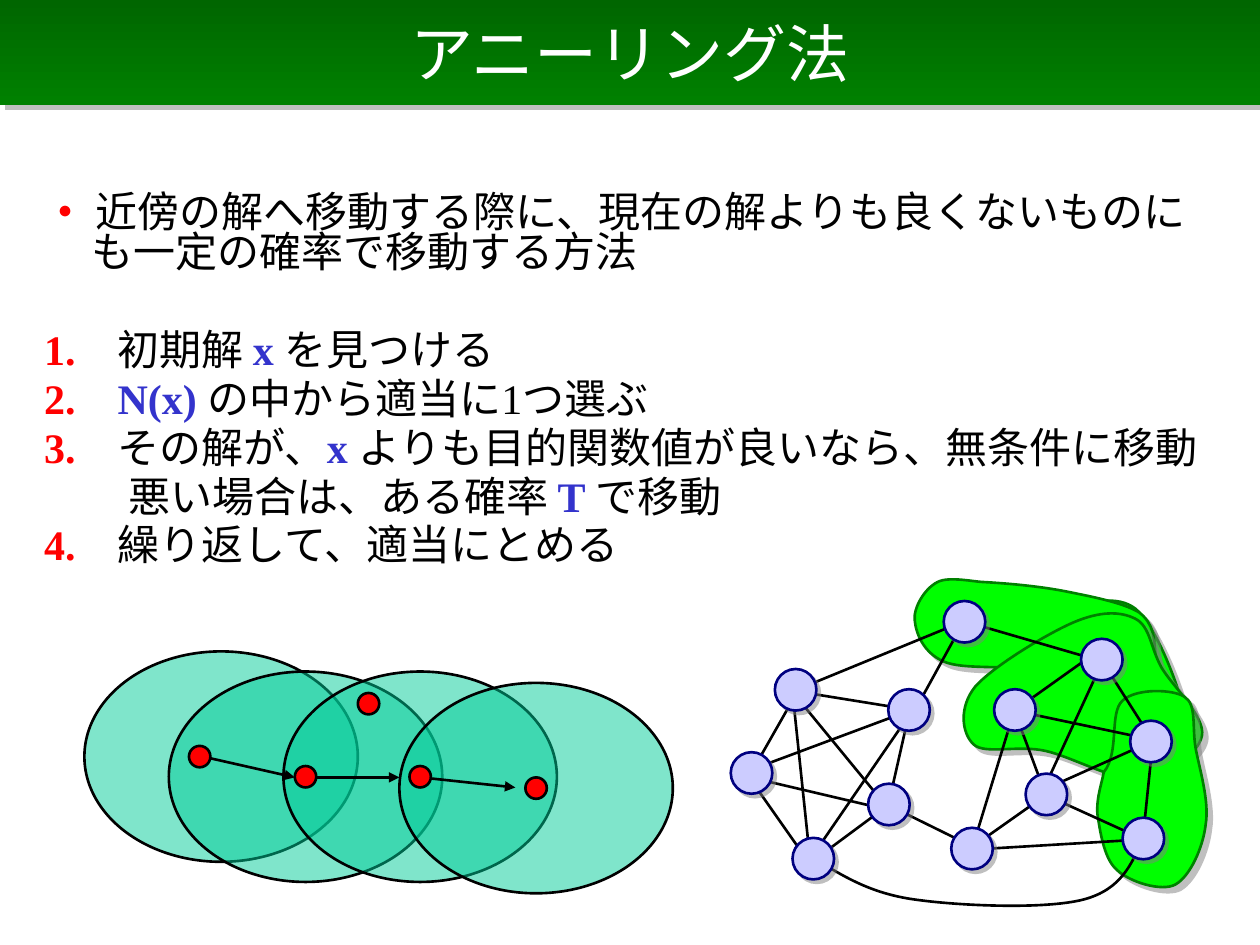
from lxml.etree import SubElement
from pptx import Presentation
from pptx.dml.color import RGBColor
from pptx.enum.shapes import MSO_CONNECTOR, MSO_SHAPE
from pptx.enum.text import MSO_ANCHOR, MSO_AUTO_SIZE, PP_ALIGN
from pptx.oxml.ns import qn
from pptx.util import Pt

PX = 9144  # EMU in one px, 100 px to the inch
FONT = "Times New Roman"
BLACK = RGBColor(0x00, 0x00, 0x00)
WHITE = RGBColor(0xFF, 0xFF, 0xFF)
RED = RGBColor(0xFF, 0x00, 0x00)
BLUE = RGBColor(0x33, 0x33, 0xCC)
NAVY = RGBColor(0x00, 0x00, 0x80)
LILAC = RGBColor(0xCC, 0xCC, 0xFF)
TEAL = RGBColor(0x00, 0xCC, 0x99)
LIME = RGBColor(0x00, 0xFF, 0x00)
GREEN = RGBColor(0x00, 0x80, 0x00)
DARK_GREEN = RGBColor(0x00, 0x66, 0x00)
SHADOW = RGBColor(0x80, 0x80, 0x80)

LIST_ITEMS = [
    [("• ", RED), ("近傍の解へ移動する際に、現在の解よりも良くないものにも一定の確率で移動する方法", BLACK)],
    [("1.", RED), ("　初期解 ", BLACK), ("x ", BLUE), ("を見つける", BLACK)],
    [("2.　", RED), ("N(x) ", BLUE), ("の中から適当に1つ選ぶ", BLACK)],
    [("3.", RED), ("　その解が、", BLACK), ("x ", BLUE),
     ("よりも目的関数値が良いなら、無条件に移動", BLACK)],
    [("　　悪い場合は、ある確率 ", BLACK), ("T ", BLUE), ("で移動", BLACK)],
    [("4.", RED), ("　繰り返して、適当にとめる", BLACK)],
]

# Walk: positions inside its box
NEIGHBOURHOODS = [(0, 0), (67, 16), (158, 16), (250, 25)]
SOLUTIONS = [(350, 100), (217, 33), (83, 75), (167, 91), (258, 91)]
MOVES = [(92, 83, 167, 100), (175, 100, 250, 100), (267, 100, 342, 108)]

# Graph: positions inside its box; a curve is a start and then triples of points
BLOBS = [
    [(337, 137), (332, 124), (341, 95), (352, 86), (363, 77), (387, 72), (401, 83),
     (415, 94), (431, 133), (437, 154), (443, 174), (442, 198), (437, 208),
     (432, 217), (422, 223), (405, 211), (388, 199), (351, 153), (337, 137)],
    [(282, 62), (299, 63), (323, 65), (344, 69), (364, 73), (391, 78), (404, 86),
     (416, 95), (416, 107), (417, 118), (419, 130), (421, 149), (414, 157),
     (408, 165), (393, 169), (378, 165), (362, 161), (343, 140), (322, 133),
     (300, 127), (265, 132), (249, 125), (233, 118), (227, 103), (226, 92),
     (225, 82), (234, 67), (244, 62), (253, 57), (274, 62), (282, 62)],
    [(274, 145), (288, 129), (331, 103), (352, 94), (373, 85), (389, 85), (401, 91),
     (413, 97), (413, 114), (422, 130), (431, 145), (457, 169), (454, 184),
     (451, 199), (426, 216), (405, 218), (384, 220), (352, 201), (330, 196),
     (308, 191), (282, 199), (273, 191), (263, 182), (261, 161), (274, 145)],
    [(376, 213), (389, 197), (380, 166), (391, 156), (402, 146), (431, 147), (440, 153),
     (450, 159), (446, 177), (449, 194), (452, 210), (460, 236), (457, 254),
     (455, 272), (445, 295), (433, 302), (422, 308), (396, 300), (386, 290),
     (376, 281), (373, 259), (371, 246), (370, 233), (375, 220), (376, 213)],
]
LONG_EDGE = [(147, 282), (169, 295), (190, 309), (226, 314), (261, 319), (329, 322),
             (360, 314), (390, 306), (398, 286), (407, 266)]
EDGES = [
    (277, 274, 411, 266), (224, 164, 143, 282), (330, 231, 407, 266), (305, 164, 414, 187),
    (147, 282, 205, 239), (128, 148, 206, 243), (305, 164, 364, 122), (222, 164, 96, 211),
    (104, 219, 206, 243), (305, 164, 272, 272), (96, 219, 143, 286), (143, 283, 128, 140),
    (272, 272, 330, 231), (205, 239, 272, 272), (222, 164, 205, 239), (128, 148, 227, 164),
    (305, 164, 330, 231), (130, 154, 97, 212), (407, 266, 415, 188), (328, 227, 415, 188),
    (415, 188, 375, 125), (375, 125, 265, 93), (265, 93, 131, 148), (265, 93, 226, 164),
    (375, 125, 328, 227),
]
NODES = [(289, 147), (205, 147), (255, 257), (189, 222), (314, 214), (80, 197),
         (397, 172), (115, 131), (249, 77), (358, 107), (391, 249), (129, 265)]


def place(shape, left, top, width, height):
    shape.left, shape.top = left * PX, top * PX
    shape.width, shape.height = width * PX, height * PX


def set_shadow(shape, distance=None):
    """Clear the theme shadow; with a distance in points, cast a half-clear one."""
    shape.shadow.inherit = False
    if distance:
        effects = shape.element.spPr.find(qn("a:effectLst"))
        outer = SubElement(effects, qn("a:outerShdw"), blurRad="0", dist=str(Pt(distance)),
                           dir="2700000", algn="ctr", rotWithShape="0")
        color = SubElement(outer, qn("a:srgbClr"), val=str(SHADOW))
        SubElement(color, qn("a:alpha"), val="50000")


def set_line(shape, color):
    shape.line.color.rgb = color
    shape.line.width = Pt(1.5)


def add_run(paragraph, text, size, color, bold=False):
    run = paragraph.add_run()
    run.text = text
    run.font.name, run.font.size, run.font.bold = FONT, Pt(size), bold
    run.font.color.rgb = color


def add_ellipse(slide, left, top, width, height, fill, line=BLACK, shadow=None, alpha=None):
    shape = slide.shapes.add_shape(MSO_SHAPE.OVAL, left * PX, top * PX, width * PX, height * PX)
    shape.fill.solid()
    shape.fill.fore_color.rgb = fill
    if alpha:
        color = shape.element.spPr.find(qn("a:solidFill")).find(qn("a:srgbClr"))
        SubElement(color, qn("a:alpha"), val=str(alpha * 1000))
    set_line(shape, line)
    set_shadow(shape, shadow)


def add_edge(slide, origin_x, origin_y, ends, arrow=False):
    x1, y1, x2, y2 = ends
    connector = slide.shapes.add_connector(
        MSO_CONNECTOR.STRAIGHT, (origin_x + x1) * PX, (origin_y + y1) * PX,
        (origin_x + x2) * PX, (origin_y + y2) * PX)
    set_line(connector, BLACK)
    properties = connector.element.spPr
    if arrow:
        SubElement(properties.find(qn("a:ln")), qn("a:tailEnd"), type="triangle")
    SubElement(properties, qn("a:effectLst"))


def add_curve(slide, left, top, points, line, fill=None, shadow=None):
    """Draw cubic curves through a start point and triples of points."""
    start, *rest = [((left + x) * PX, (top + y) * PX) for x, y in points]
    builder = slide.shapes.build_freeform(*start)
    builder.add_line_segments(rest, close=fill is not None)
    shape = builder.convert_to_shape()
    segments = list(shape.element.iter(qn("a:lnTo")))
    for first in range(0, len(segments), 3):
        parent = segments[first].getparent()
        curve = SubElement(parent, qn("a:cubicBezTo"))
        segments[first].addprevious(curve)
        for segment in segments[first:first + 3]:
            curve.append(segment[0])
            parent.remove(segment)
    if fill is None:
        shape.fill.background()
    else:
        shape.fill.solid()
        shape.fill.fore_color.rgb = fill
    set_line(shape, line)
    set_shadow(shape, shadow)


def fill_title(title, box):
    place(title, *box)
    title.fill.gradient()
    title.fill.gradient_angle = 270
    for stop, color in zip(title.fill.gradient_stops, (DARK_GREEN, GREEN)):
        stop.color.rgb = color
    set_shadow(title, 4.2)
    title.text_frame.vertical_anchor = MSO_ANCHOR.MIDDLE
    paragraph = title.text_frame.paragraphs[0]
    paragraph.alignment = PP_ALIGN.CENTER
    add_run(paragraph, "アニーリング法", 36, WHITE)


def fill_body(body, box):
    place(body, *box)
    frame = body.text_frame
    frame.auto_size = MSO_AUTO_SIZE.NONE
    for index, runs in enumerate(LIST_ITEMS):
        paragraph = frame.add_paragraph() if index else frame.paragraphs[0]
        paragraph.line_spacing = 0.8
        paragraph.space_before = Pt(33 if index == 1 else 4.8)
        properties = paragraph._p.get_or_add_pPr()
        properties.set("marL", str(38 * PX))
        properties.set("indent", str(-38 * PX))
        SubElement(properties, qn("a:buNone"))
        for text, color in runs:
            add_run(paragraph, text, 24, color, bold=color != BLACK)


def add_walk(slide, left, top):
    for x, y in NEIGHBOURHOODS:
        add_ellipse(slide, left + x, top + y, 217, 167, TEAL, alpha=50)
    for move in MOVES:
        add_edge(slide, left, top, move, arrow=True)
    for x, y in SOLUTIONS:
        add_ellipse(slide, left + x, top + y, 17, 17, RED)


def add_graph(slide, left, top):
    for blob in BLOBS:
        add_curve(slide, left, top, blob, GREEN, LIME, 4.2)
    for edge in EDGES:
        add_edge(slide, left, top, edge)
    add_curve(slide, left, top, LONG_EDGE, BLACK)
    for x, y in NODES:
        add_ellipse(slide, left + x, top + y, 33, 33, LILAC, NAVY, 2.8)


def main():
    presentation = Presentation()
    presentation.slide_width, presentation.slide_height = 1000 * PX, 750 * PX
    slide = presentation.slides.add_slide(presentation.slide_layouts[1])
    fill_title(slide.shapes.title, (0, 0, 1000, 83))
    fill_body(slide.placeholders[1], (25, 150, 950, 319))
    add_graph(slide, 500, 400)
    add_walk(slide, 67, 517)
    presentation.save("out.pptx")


if __name__ == "__main__":
    main()
